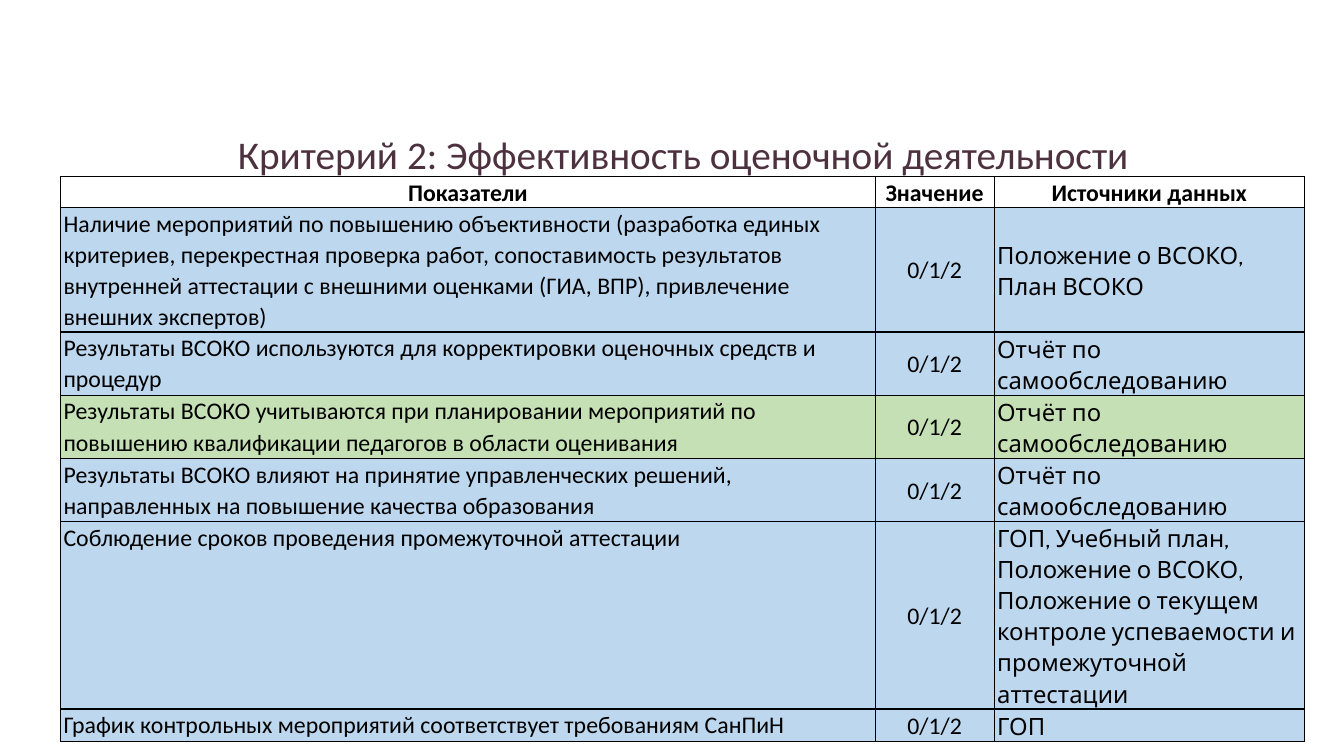
import pptx
import pptx.util
import pptx.dml.color
import pptx.enum.text
import pptx.oxml
import pptx.oxml.ns

Inches = pptx.util.Inches
Pt = pptx.util.Pt
RGBColor = pptx.dml.color.RGBColor
Align = pptx.enum.text.PP_ALIGN
Anchor = pptx.enum.text.MSO_ANCHOR

# Content: indicator, data source, lines of text the row holds
TITLE = "Критерий 2: Эффективность оценочной деятельности"
HEADINGS = ("Показатели", "Значение", "Источники данных")
SCORE = "0/1/2"
REPORT = "Отчёт по самообследованию"
INDICATORS = [
    ("Наличие мероприятий по повышению объективности (разработка единых критериев, "
     "перекрестная проверка работ, сопоставимость результатов внутренней аттестации "
     "с внешними оценками (ГИА, ВПР), привлечение внешних экспертов)",
     "Положение о ВСОКО, План ВСОКО", 4),
    ("Результаты ВСОКО используются для корректировки оценочных средств и процедур",
     REPORT, 2),
    ("Результаты ВСОКО учитываются при планировании мероприятий по повышению "
     "квалификации педагогов в области оценивания", REPORT, 2),
    ("Результаты ВСОКО влияют на принятие управленческих решений, направленных "
     "на повышение качества образования", REPORT, 2),
    ("Соблюдение сроков проведения промежуточной аттестации",
     "ГОП, Учебный план, Положение о ВСОКО, Положение о текущем контроле "
     "успеваемости и промежуточной аттестации", 6),
    ("График контрольных мероприятий соответствует требованиям СанПиН", "ГОП", 1),
]
GREEN_ROW = 3

# Look
BLACK = RGBColor(0x00, 0x00, 0x00)
WHITE = RGBColor(0xFF, 0xFF, 0xFF)
PLUM = RGBColor(0x4D, 0x31, 0x3E)
BLUE = RGBColor(0xBD, 0xD7, 0xEE)
GREEN = RGBColor(0xC5, 0xE0, 0xB4)
COLUMNS = (8.08, 1.18, 3.08)
LINE_HEIGHT = 0.3
HEADING = {"name": "Calibri", "bold": True}
COLUMN_STYLES = (
    ({"name": "Calibri"}, Align.LEFT, Anchor.TOP),
    ({"name": "Calibri"}, Align.CENTER, Anchor.MIDDLE),
    ({"name": "Cabin"}, Align.LEFT, Anchor.MIDDLE),
)


def apply(target, values):
    for name, value in values.items():
        setattr(target, name, value)


def write(frame, text, font, color, **layout):
    para = frame.paragraphs[0]
    apply(para, layout)
    span = para.add_run()
    span.text = text
    apply(span.font, font)
    span.font.color.rgb = color


def add_borders(cell):
    properties = cell._tc.get_or_add_tcPr()
    for position, side in enumerate(("lnL", "lnR", "lnT", "lnB")):
        properties.insert(position, pptx.oxml.parse_xml(
            f'<a:{side} {pptx.oxml.ns.nsdecls("a")} w="{Pt(1)}">'
            f'<a:solidFill><a:srgbClr val="{BLACK}"/></a:solidFill></a:{side}>'))


deck = pptx.Presentation()
apply(deck, {"slide_width": Inches(13.33), "slide_height": Inches(7.5)})
page = deck.slides.add_slide(deck.slide_layouts[5])

# Title
title = page.shapes.title
apply(title, {"left": Inches(0.51), "top": Inches(1.3),
              "width": Inches(12.53), "height": Inches(0.45)})
apply(title.text_frame, {"word_wrap": True, "vertical_anchor": Anchor.TOP,
                         "auto_size": pptx.enum.text.MSO_AUTO_SIZE.NONE})
write(title.text_frame, TITLE, {"name": "Calibri", "size": Pt(28)}, PLUM,
      alignment=Align.CENTER, line_spacing=0.9)

# Table grid: row heights follow the number of text lines
rows = [HEADINGS] + [(name, SCORE, source) for name, source, _ in INDICATORS]
heights = [LINE_HEIGHT] + [LINE_HEIGHT * lines for _, _, lines in INDICATORS]
table = page.shapes.add_table(
    len(rows), len(COLUMNS), Inches(0.6), Inches(1.75),
    Inches(sum(COLUMNS)), Inches(sum(heights))).table
for column, width in zip(table.columns, COLUMNS):
    column.width = Inches(width)
for row, height in zip(table.rows, heights):
    row.height = Inches(height)

# Cells
for r, texts in enumerate(rows):
    fill = WHITE if r == 0 else GREEN if r == GREEN_ROW else BLUE
    for c, text in enumerate(texts):
        font, align, anchor = COLUMN_STYLES[c]
        if r == 0:
            font, align, anchor = HEADING, Align.CENTER, Anchor.MIDDLE
        cell = table.cell(r, c)
        cell.fill.solid()
        cell.fill.fore_color.rgb = fill
        apply(cell, {"margin_left": Inches(0.03), "margin_right": Inches(0.03),
                     "margin_top": Inches(0.01 if r and c == 2 else 0),
                     "margin_bottom": 0, "vertical_anchor": anchor})
        add_borders(cell)
        write(cell.text_frame, text, {"size": Pt(17), "bold": False, **font}, BLACK,
              alignment=align, line_spacing=1.07,
              space_after=Pt(8 if r and c == 2 else 0))

deck.save("out.pptx")
